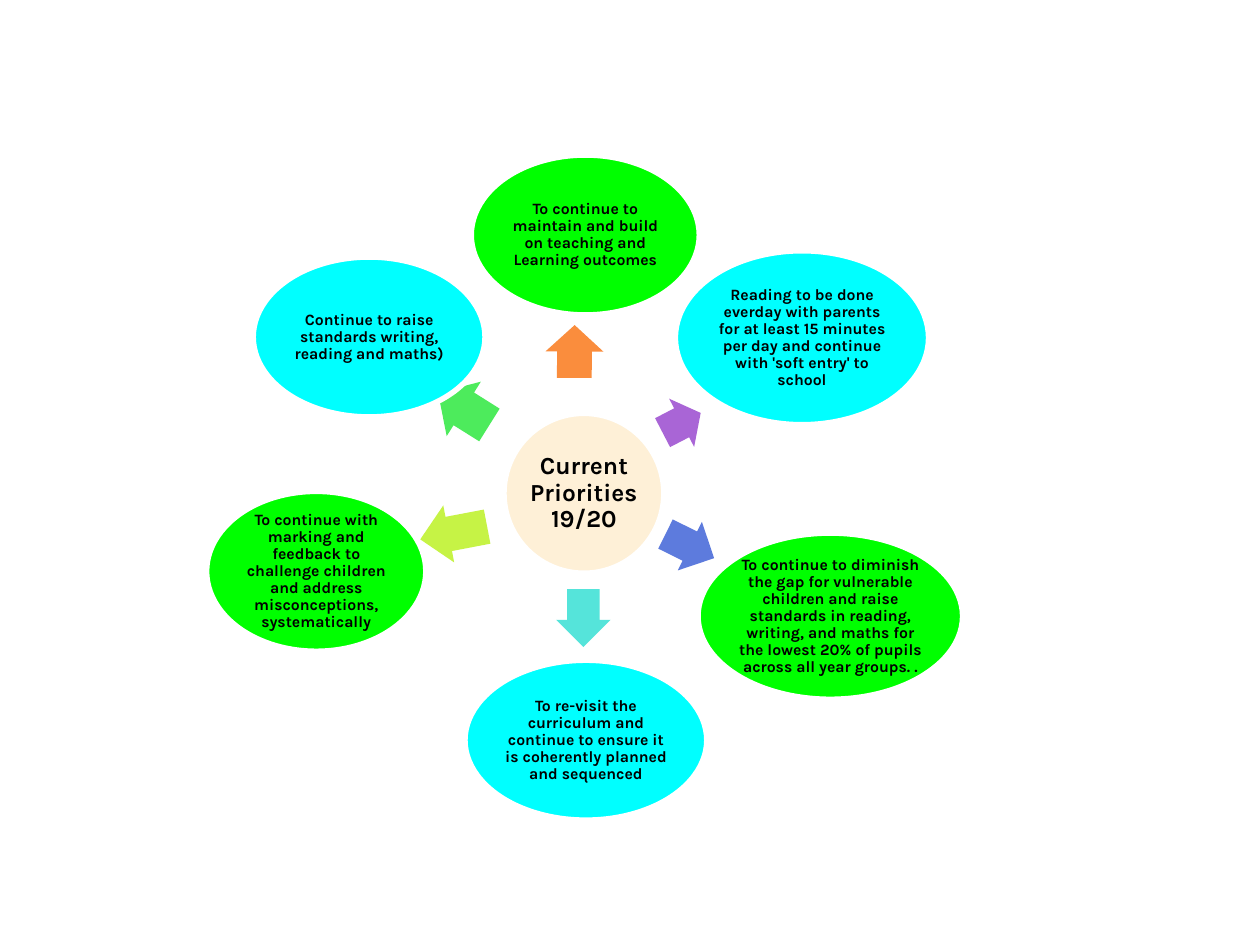
from dataclasses import dataclass

from pptx import Presentation
from pptx.dml.color import RGBColor
from pptx.enum.shapes import MSO_SHAPE
from pptx.enum.text import MSO_ANCHOR, PP_ALIGN
from pptx.shapes.autoshape import Shape
from pptx.slide import Slide
from pptx.util import Pt

GREEN = "00FF00"
CYAN = "00FFFF"
CREAM = "FEF0D7"
WHITE = "FFFFFF"
BLACK = "000000"
BUBBLE_HEIGHT = 91.4
OUTLINE_WIDTH = 3.15
ARROW_ADJUSTMENTS = (0.6, 0.5)
FRAME_FORMAT = {"word_wrap": True, "vertical_anchor": MSO_ANCHOR.MIDDLE}
PARAGRAPH_FORMAT = {"alignment": PP_ALIGN.CENTER, "line_spacing": 0.9}
FONT_FORMAT = {"name": "Karla", "bold": True}


@dataclass(frozen=True)
class Bubble:
    left: float
    top: float
    width: float
    fill: str
    text: str
    height: float = BUBBLE_HEIGHT
    font_size: float = 9
    inset: float = 0.8


@dataclass(frozen=True)
class Arrow:
    left: float
    top: float
    width: float
    height: float
    rotation: float
    fill: str


PIECES: list[Bubble | Arrow] = [
    Bubble(269.3, 88.6, 130.3, GREEN,
           "To continue to maintain and build on teaching and Learning outcomes"),
    Bubble(385.9, 143.3, 144.7, CYAN,
           "Reading to be done everday with parents for at least 15 minutes "
           "per day and continue with 'soft entry' to school", height=99.4),
    Arrow(377.3, 226.1, 24.5, 31, 332.6, "A965D6"),
    Bubble(288, 236.2, BUBBLE_HEIGHT, CREAM, "Current Priorities 19/20",
           font_size=14, inset=1.3),
    Arrow(378.7, 296.6, 31, 31, 26.4, "5D7BDD"),
    Bubble(398.9, 304.6, 151.2, GREEN,
           "To continue to diminish the gap for vulnerable children and raise "
           "standards in reading, writing, and maths for the lowest 20% of "
           "pupils across all year groups. .", height=95),
    Arrow(316.8, 337.7, 33.1, 31, 90, "55E4DA"),
    Bubble(265.7, 377.3, 138.2, CYAN,
           "To re-visit the curriculum and continue to ensure it is "
           "coherently planned and sequenced"),
    Arrow(247.7, 215.3, 34.6, 36.7, 212.1, "4DEB5C"),
    Bubble(118.1, 280.8, 125.3, GREEN,
           "To continue with marking and feedback to challenge children and "
           "address misconceptions, systematically"),
    Arrow(239.8, 288, 38.9, 33.1, 169.2, "C6F345"),
    Bubble(144.7, 146.9, 132.5, CYAN,
           "Continue to raise standards writing, reading and maths)"),
    Arrow(313.2, 184.3, 30.2, 33.1, 270.3, "FA8D3D"),
]


def color(value: str) -> RGBColor:
    return RGBColor.from_string(value)


def apply_format(target: object, values: dict[str, object]) -> None:
    for name, value in values.items():
        setattr(target, name, value)


def add_piece(slide: Slide, kind: MSO_SHAPE, piece: Bubble | Arrow) -> Shape:
    shape = slide.shapes.add_shape(
        kind, Pt(piece.left), Pt(piece.top), Pt(piece.width), Pt(piece.height))
    shape.shadow.inherit = False
    shape.fill.solid()
    shape.fill.fore_color.rgb = color(piece.fill)
    return shape


def draw_bubble(slide: Slide, bubble: Bubble) -> None:
    shape = add_piece(slide, MSO_SHAPE.OVAL, bubble)
    shape.line.color.rgb = color(WHITE)
    shape.line.width = Pt(OUTLINE_WIDTH)
    frame = shape.text_frame
    apply_format(frame, FRAME_FORMAT)
    for side in ("left", "top", "right", "bottom"):
        setattr(frame, f"margin_{side}", Pt(bubble.inset))
    paragraph = frame.paragraphs[0]
    apply_format(paragraph, PARAGRAPH_FORMAT)
    run = paragraph.add_run()
    run.text = bubble.text
    apply_format(run.font, FONT_FORMAT | {"size": Pt(bubble.font_size)})
    run.font.color.rgb = color(BLACK)


def draw_arrow(slide: Slide, arrow: Arrow) -> None:
    shape = add_piece(slide, MSO_SHAPE.RIGHT_ARROW, arrow)
    shape.line.fill.background()
    shape.rotation = arrow.rotation
    for index, value in enumerate(ARROW_ADJUSTMENTS):
        shape.adjustments[index] = value


def main() -> None:
    presentation = Presentation()
    presentation.slide_width = Pt(720)
    presentation.slide_height = Pt(540)
    slide = presentation.slides.add_slide(presentation.slide_layouts[6])
    for piece in PIECES:
        if isinstance(piece, Bubble):
            draw_bubble(slide, piece)
        else:
            draw_arrow(slide, piece)
    presentation.save("out.pptx")


if __name__ == "__main__":
    main()
